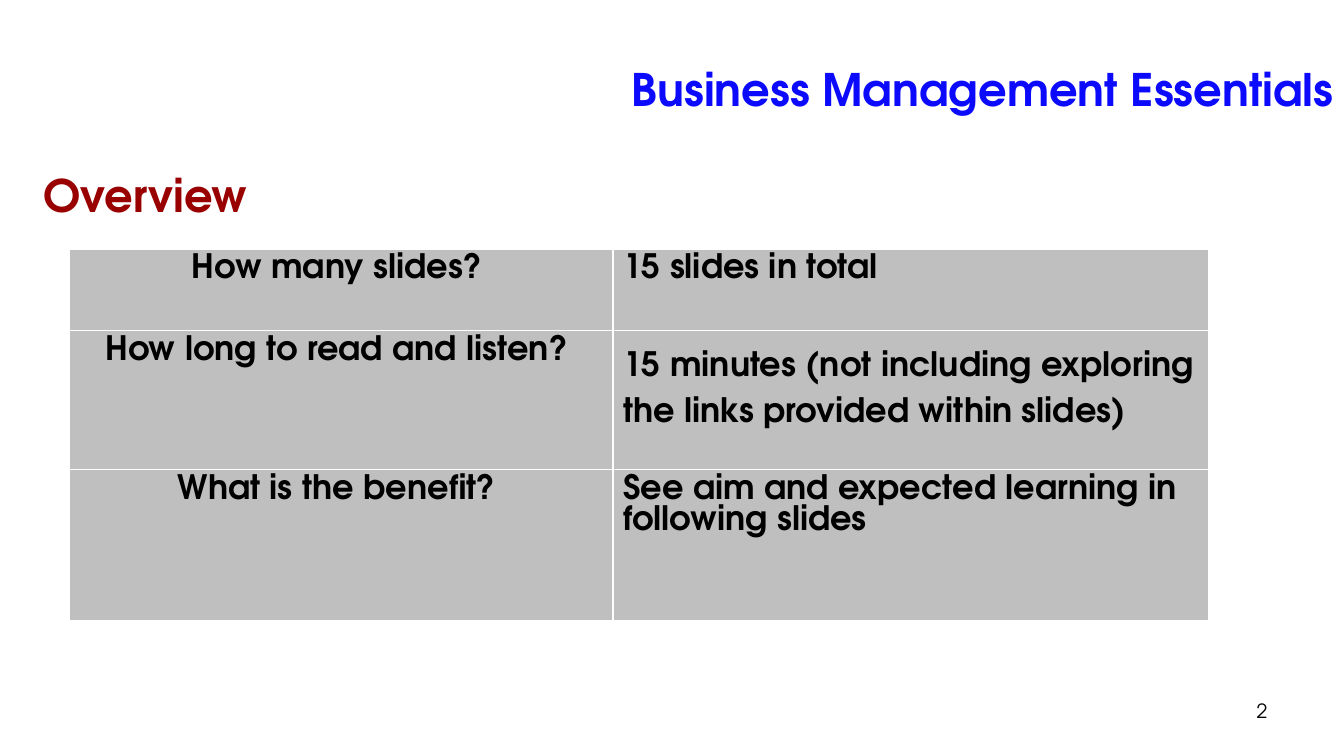
from dataclasses import dataclass

from lxml.etree import SubElement
from pptx import Presentation
from pptx.dml.color import RGBColor
from pptx.enum.text import MSO_ANCHOR as Anchor, PP_ALIGN as Align
from pptx.oxml.ns import qn
from pptx.slide import Slide
from pptx.table import _Cell as Cell
from pptx.text.text import _Paragraph as Paragraph
from pptx.util import Inches, Pt

FONT = "TeX Gyre Adventor"
BLUE = RGBColor(0x0B, 0x0A, 0xFD)
DARK_RED = RGBColor(0x99, 0x00, 0x00)
BLACK = RGBColor(0x00, 0x00, 0x00)
GREY = RGBColor(0xBF, 0xBF, 0xBF)
WHITE = RGBColor(0xFF, 0xFF, 0xFF)


@dataclass
class Label:
    text: str
    left: float
    top: float
    width: float
    height: float
    size: int
    color: RGBColor
    bold: bool = True
    align: Align = Align.LEFT
    anchor: Anchor = Anchor.TOP
    inset_top: float = 0.05


@dataclass
class OverviewRow:
    question: str
    answer: str
    height: float
    answer_spacing: float = 1.0


LABELS = [
    Label("Business Management Essentials", 0.92, 0, 12.41, 1.2, 32, BLUE,
          align=Align.RIGHT, anchor=Anchor.BOTTOM),
    Label("Overview", 0.33, 1.49, 3.24, 0.67, 32, DARK_RED, inset_top=0.17),
    Label("2", 9.56, 6.83, 3.11, 0.52, 14, BLACK, bold=False,
          align=Align.RIGHT, inset_top=0.1),
]
ROWS = [
    OverviewRow("How many slides? ", "15 slides in total", 0.81),
    OverviewRow("How long to read and listen? ",
                "15 minutes (not including exploring the links provided within slides)",
                1.38, 1.5),
    OverviewRow("What is the benefit? ",
                "See aim and expected learning in following slides", 1.5),
]
COLUMN_WIDTHS = [5.39, 5.91]


def style_paragraph(paragraph: Paragraph, text: str, size: int, color: RGBColor,
                    bold: bool, align: Align) -> None:
    paragraph.text = text
    paragraph.alignment = align
    font = paragraph.font
    font.name, font.size, font.bold = FONT, Pt(size), bold
    font.color.rgb = color


def add_label(slide: Slide, label: Label) -> None:
    box = slide.shapes.add_textbox(Inches(label.left), Inches(label.top),
                                   Inches(label.width), Inches(label.height))
    frame = box.text_frame
    frame.word_wrap = True
    frame.vertical_anchor = label.anchor
    frame.margin_top = Inches(label.inset_top)
    style_paragraph(frame.paragraphs[0], label.text, label.size, label.color,
                    label.bold, label.align)


def add_borders(cell: Cell) -> None:
    properties = cell._tc.get_or_add_tcPr()
    for side in ("lnL", "lnR", "lnT", "lnB"):
        line = SubElement(properties, qn(f"a:{side}"), w=str(Pt(1)))
        fill = SubElement(line, qn("a:solidFill"))
        SubElement(fill, qn("a:srgbClr"), val=str(WHITE))


def fill_cell(cell: Cell, text: str, align: Align, spacing: float) -> None:
    add_borders(cell)
    cell.fill.solid()
    cell.fill.fore_color.rgb = GREY
    paragraph = cell.text_frame.paragraphs[0]
    style_paragraph(paragraph, text, 24, BLACK, True, align)
    paragraph.line_spacing = spacing


def add_overview_table(slide: Slide) -> None:
    height = sum(row.height for row in ROWS)
    table = slide.shapes.add_table(len(ROWS), len(COLUMN_WIDTHS), Inches(0.69), Inches(2.47),
                                   Inches(sum(COLUMN_WIDTHS)), Inches(height)).table
    table.first_row = table.horz_banding = False
    for column, width in zip(table.columns, COLUMN_WIDTHS):
        column.width = Inches(width)
    for table_row, row in zip(table.rows, ROWS):
        table_row.height = Inches(row.height)
        question_cell, answer_cell = table_row.cells
        fill_cell(question_cell, row.question, Align.CENTER, 1.0)
        fill_cell(answer_cell, row.answer, Align.LEFT, row.answer_spacing)


def main() -> None:
    presentation = Presentation()
    presentation.slide_width = Inches(13.33)
    presentation.slide_height = Inches(7.5)
    slide = presentation.slides.add_slide(presentation.slide_layouts[6])
    for label in LABELS:
        add_label(slide, label)
    add_overview_table(slide)
    presentation.save("out.pptx")


if __name__ == "__main__":
    main()
